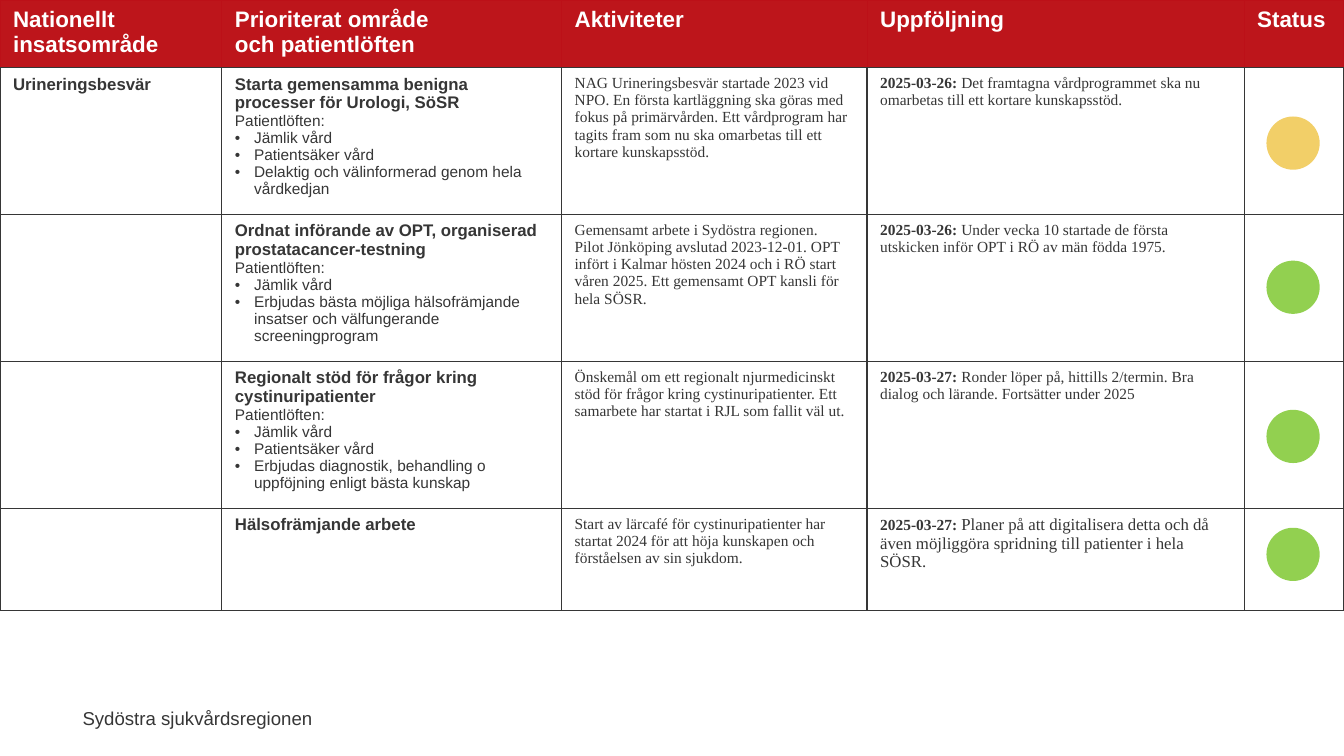
"""Builds the status table for urology work in the health care region."""
from itertools import accumulate

from lxml import etree
from pptx import Presentation, util as u
from pptx.dml.color import RGBColor
from pptx.enum import shapes, text
from pptx.oxml import ns

RED = RGBColor(0xBC, 0x10, 0x18)
HEADER_RED = RGBColor(0xBD, 0x15, 0x1B)
INK = RGBColor(0x36, 0x36, 0x36)
WHITE = RGBColor(0xFF, 0xFF, 0xFF)
YELLOW = RGBColor(0xF2, 0xCF, 0x68)
GREEN = RGBColor(0x92, 0xD0, 0x50)
SANS, SERIF = "Arial", "Times New Roman"

COLUMNS = [2.2, 3.37, 3.03, 3.74, 0.99]
ROWS = [0.67, 1.45, 1.45, 1.45, 1.01]
DOT = 0.5
HEADINGS = ["Nationellt insatsområde", "Prioriterat område\voch patientlöften",
            "Aktiviteter", "Uppföljning", "Status"]
EFFORTS = [
    dict(field="Urineringsbesvär",
         area="Starta gemensamma benigna processer för Urologi, SöSR",
         promises=["Jämlik vård", "Patientsäker vård",
                   "Delaktig och välinformerad genom hela vårdkedjan"],
         activities=["NAG Urineringsbesvär startade 2023 vid NPO. En första kartläggning "
                     "ska göras med fokus på primärvården. Ett vårdprogram har tagits fram "
                     "som nu ska omarbetas till ett kortare kunskapsstöd."],
         date="2025-03-26: ", size=11,
         followup="Det framtagna vårdprogrammet ska nu omarbetas till ett kortare "
                  "kunskapsstöd.",
         status=YELLOW, dot_drop=0.5),
    dict(field="",
         area="Ordnat införande av OPT, organiserad prostatacancer-testning",
         promises=["Jämlik vård", "Erbjudas bästa möjliga hälsofrämjande insatser och "
                   "välfungerande screeningprogram"],
         activities=["Gemensamt arbete i Sydöstra regionen.",
                     "Pilot Jönköping avslutad 2023-12-01. OPT infört i Kalmar hösten 2024 "
                     "och i RÖ start våren 2025. Ett gemensamt OPT kansli för hela SÖSR."],
         date="2025-03-26: ", size=11,
         followup="Under vecka 10 startade de första utskicken inför OPT i RÖ av män "
                  "födda 1975.",
         status=GREEN, dot_drop=0.48),
    dict(field="",
         area="Regionalt stöd för frågor kring cystinuripatienter",
         promises=["Jämlik vård", "Patientsäker vård",
                   "Erbjudas diagnostik, behandling o uppföjning enligt bästa kunskap"],
         activities=["Önskemål om ett regionalt njurmedicinskt stöd för frågor kring "
                     "cystinuripatienter. Ett samarbete har startat i RJL som fallit väl ut."],
         date="2025-03-27: ", size=11,
         followup="Ronder löper på, hittills 2/termin. Bra dialog och lärande. "
                  "Fortsätter under 2025",
         status=GREEN, dot_drop=0.51),
    dict(field="", area="Hälsofrämjande arbete", promises=[],
         activities=["Start av lärcafé för cystinuripatienter har startat 2024 för att höja "
                     "kunskapen och förståelsen av sin sjukdom."],
         date="2025-03-27: ", size=12,
         followup="Planer på att digitalisera detta och då även möjliggöra spridning till "
                  "patienter i hela SÖSR.",
         status=GREEN, dot_drop=0.23),
]


def style(run, size, face=SANS, bold=False, color=INK):
    """Set the look of one run."""
    run.font.size, run.font.name, run.font.bold = u.Pt(size), face, bold
    run.font.color.rgb = color


def write(frame, lines, *look, **more):
    """Fill a frame with one paragraph per line, all in one look."""
    frame.text = "\n".join(lines)
    for paragraph in frame.paragraphs:
        for run in paragraph.runs:
            style(run, *look, **more)


def add_bullet(paragraph):
    """Give a paragraph a hanging bullet."""
    properties = paragraph._p.get_or_add_pPr()
    indent = u.Inches(0.19)
    properties.set("marL", str(indent))
    properties.set("indent", str(-indent))
    etree.SubElement(properties, ns.qn("a:buFont"), typeface=SANS)
    etree.SubElement(properties, ns.qn("a:buChar"), char="•")


def frame_cell(cell, sides, bottom, width, fill):
    """Draw the borders, the fill and the margins of a cell."""
    properties = cell._tc.get_or_add_tcPr()
    edges = dict(lnL=(sides, width), lnR=(sides, width),
                 lnT=(sides, width), lnB=(bottom, 1))
    for edge, (color, points) in edges.items():
        line = etree.SubElement(properties, ns.qn(f"a:{edge}"), w=str(u.Pt(points)))
        solid = etree.SubElement(line, ns.qn("a:solidFill"))
        etree.SubElement(solid, ns.qn("a:srgbClr"), val=str(color))
    cell.fill.solid()
    cell.fill.fore_color.rgb = fill
    cell.margin_left = cell.margin_right = u.Inches(0.13)
    cell.margin_top = cell.margin_bottom = u.Inches(0.07)


def write_area(frame, effort):
    """Write the prioritised area and its patient promises."""
    promises = effort["promises"]
    intro = ["Patientlöften:"] if promises else []
    write(frame, [effort["area"], *intro, *promises], 11)
    style(frame.paragraphs[0].runs[0], 12, bold=True)
    for paragraph in frame.paragraphs[2:]:
        add_bullet(paragraph)


def write_followup(frame, effort):
    """Write the dated follow-up note."""
    write(frame, [effort["date"]], 11, SERIF, True)
    note = frame.paragraphs[0].add_run()
    note.text = effort["followup"]
    style(note, effort["size"], SERIF)


def add_effort_table(slide):
    """Add the table with its header and one row per effort."""
    table = slide.shapes.add_table(len(ROWS), len(COLUMNS), 0, 0, u.Inches(sum(COLUMNS)),
                                   u.Inches(sum(ROWS))).table
    table.horz_banding = False
    for column, width in zip(table.columns, COLUMNS):
        column.width = u.Inches(width)
    for row, height in zip(table.rows, ROWS):
        row.height = u.Inches(height)
    for cell, heading in zip(table.rows[0].cells, HEADINGS):
        frame_cell(cell, RED, INK, 0.75, HEADER_RED)
        write(cell.text_frame, [heading], 16, bold=True, color=WHITE)
    for row, effort in zip(list(table.rows)[1:], EFFORTS):
        for cell in row.cells:
            frame_cell(cell, INK, INK, 1, WHITE)
        field, area, activities, followup, _ = [cell.text_frame for cell in row.cells]
        if effort["field"]:
            write(field, [effort["field"]], 12, bold=True)
        write_area(area, effort)
        write(activities, effort["activities"], 11, SERIF)
        write_followup(followup, effort)


def add_status_dot(slide, top, color):
    """Add a status dot in the last column."""
    left = sum(COLUMNS) - COLUMNS[-1] / 2 - DOT / 2 - 0.01
    dot = slide.shapes.add_shape(shapes.MSO_SHAPE.FLOWCHART_CONNECTOR, u.Inches(left),
                                 u.Inches(top), u.Inches(DOT), u.Inches(DOT))
    dot.shadow.inherit = False
    dot.fill.solid()
    dot.fill.fore_color.rgb = dot.line.color.rgb = color
    dot.line.width = u.Pt(2)


def add_region_name(slide):
    """Add the name of the region at the foot of the slide."""
    box = slide.shapes.add_textbox(u.Inches(0.7), u.Inches(6.96), u.Inches(2.5),
                                   u.Inches(0.33))
    frame = box.text_frame
    write(frame, ["Sydöstra sjukvårdsregionen"], 13.3)
    frame.word_wrap = False
    frame.auto_size = text.MSO_AUTO_SIZE.SHAPE_TO_FIT_TEXT
    frame.paragraphs[0].alignment = text.PP_ALIGN.RIGHT


def main():
    """Build the slide and save it."""
    deck = Presentation()
    deck.slide_width, deck.slide_height = u.Inches(13.33), u.Inches(7.5)
    slide = deck.slides.add_slide(deck.slide_layouts[6])
    add_region_name(slide)
    add_effort_table(slide)
    for row_top, effort in zip(accumulate(ROWS), EFFORTS):
        add_status_dot(slide, row_top + effort["dot_drop"], effort["status"])
    deck.save("out.pptx")


if __name__ == "__main__":
    main()
